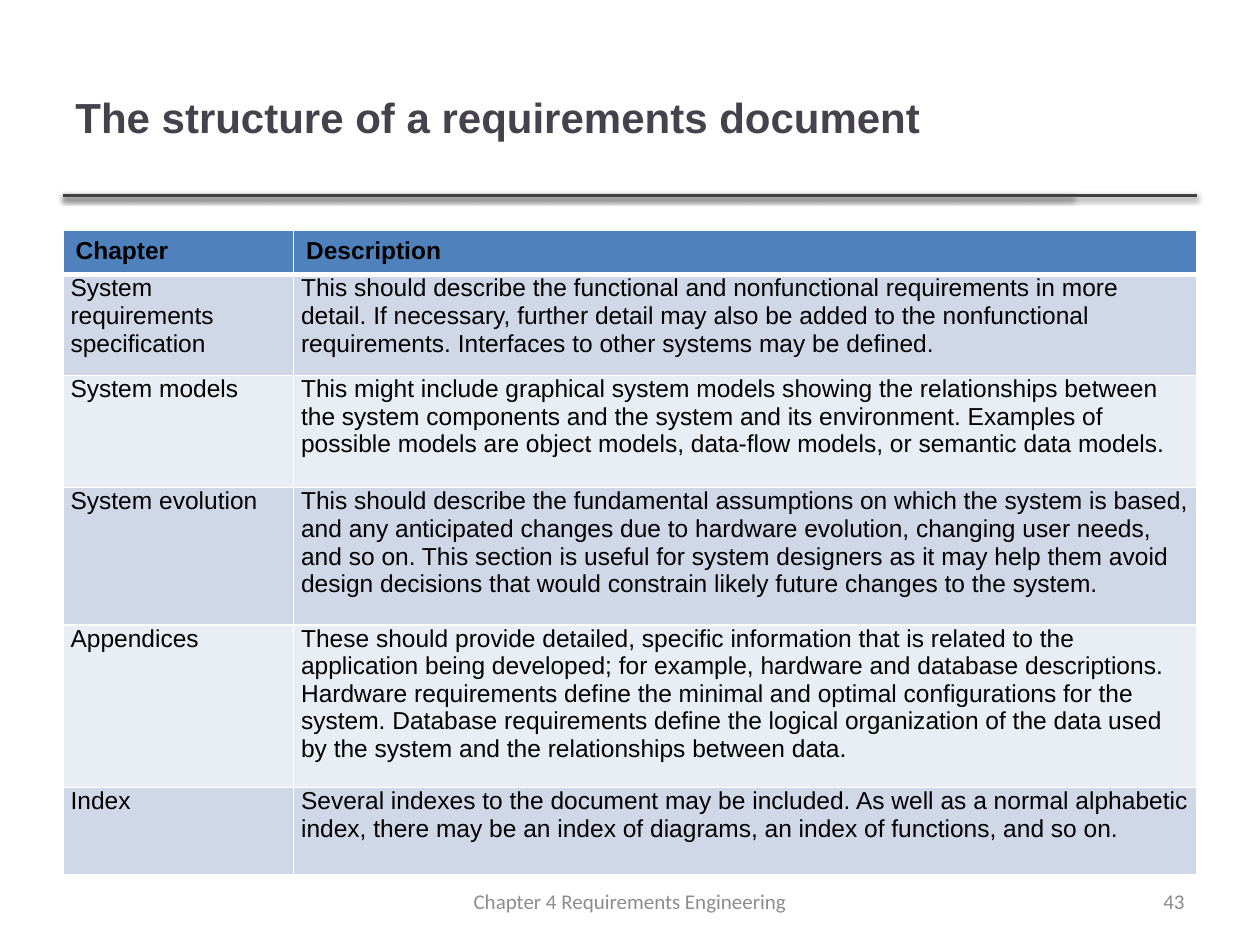
from lxml.etree import SubElement
from pptx import Presentation
from pptx.dml.color import RGBColor
from pptx.enum.shapes import MSO_CONNECTOR
from pptx.enum.text import MSO_ANCHOR, PP_ALIGN
from pptx.oxml.ns import qn
from pptx.util import Inches, Pt

COLORS = {"title": "46424D", "rule": "404040", "shade": "000000", "text": "000000",
          "head": "4F81BD", "odd": "D0D8E8", "even": "E9EDF4",
          "edge": "FFFFFF", "foot": "8C8C8C"}
WIDTH, HEIGHT = Inches(10), Inches(7.5)
COL, ROW = WIDTH / 100, HEIGHT / 150

HEADS = ("Chapter", "Description")
ROWS = (
    ("System requirements specification",
     "This should describe the functional and nonfunctional requirements in more detail. "
     "If necessary, further detail may also be added to the nonfunctional requirements. "
     "Interfaces to other systems may be defined."),
    ("System models",
     "This might include graphical system models showing the relationships between the "
     "system components and the system and its environment. Examples of possible models "
     "are object models, data-flow models, or semantic data models."),
    ("System evolution",
     "This should describe the fundamental assumptions on which the system is based, and "
     "any anticipated changes due to hardware evolution, changing user needs, and so on. "
     "This section is useful for system designers as it may help them avoid design "
     "decisions that would constrain likely future changes to the system."),
    ("Appendices",
     "These should provide detailed, specific information that is related to the "
     "application being developed; for example, hardware and database descriptions. "
     "Hardware requirements define the minimal and optimal configurations for the system. "
     "Database requirements define the logical organization of the data used by the "
     "system and the relationships between data."),
    ("Index",
     "Several indexes to the document may be included. As well as a normal alphabetic "
     "index, there may be an index of diagrams, an index of functions, and so on."),
)


def place(left, top, wide, high):
    """Turn grid columns and rows into slide lengths."""
    return round(left * COL), round(top * ROW), round(wide * COL), round(high * ROW)


def paint(name):
    """Look up a named colour."""
    return RGBColor.from_string(COLORS[name])


def write(frame, text, face, size, tint, bold=False, align=PP_ALIGN.LEFT):
    """Put one styled paragraph into a text frame."""
    para = frame.paragraphs[0]
    para.text, para.alignment = text, align
    font = para.font
    font.name, font.size, font.bold = face, Pt(size), bold
    font.color.rgb = paint(tint)


def add_text(slide, box, *args, **style):
    """Add a wrapped, vertically centred text box."""
    frame = slide.shapes.add_textbox(*place(*box)).text_frame
    frame.word_wrap, frame.vertical_anchor = True, MSO_ANCHOR.MIDDLE
    write(frame, *args, **style)


def add_rule(slide, left, top, wide):
    """Draw a horizontal line with a soft shadow below it."""
    x, y, w, _ = place(left, top, wide, 0)
    line = slide.shapes.add_connector(MSO_CONNECTOR.STRAIGHT, x, y, x + w, y)
    line.line.width, line.line.color.rgb = Pt(2), paint("rule")
    effects = SubElement(line._element.spPr, qn("a:effectLst"))
    shadow = SubElement(effects, qn("a:outerShdw"), blurRad=str(Pt(3.1)),
                        dist=str(Pt(1.6)), dir="5400000", rotWithShape="0")
    shade = SubElement(shadow, qn("a:srgbClr"), val=COLORS["shade"])
    SubElement(shade, qn("a:alpha"), val="38000")


def add_head(slide, left, top, wide, high):
    """Place the title and the doubled rule at its foot."""
    add_text(slide, (left, top, wide * 0.89, high),
             "The structure of a requirements document", "Arial", 24, "title", bold=True)
    for share in (0.89, 1):
        add_rule(slide, left, top + high, wide * share)


def style_cell(cell, fill, above=1, below=1):
    """Give a cell its white edges and its fill."""
    props = cell._tc.get_or_add_tcPr()
    for side, size in zip("LRTB", (1, 1, above, below)):
        edge = SubElement(props, qn("a:ln" + side), w=str(Pt(size)))
        tint = SubElement(edge, qn("a:solidFill"))
        SubElement(tint, qn("a:srgbClr"), val=COLORS["edge"])
    cell.fill.solid()
    cell.fill.fore_color.rgb = paint(fill)


def add_grid(slide, left, top, wide, highs):
    """Build the table of chapters and descriptions."""
    box = place(left, top, wide, sum(highs))
    table = slide.shapes.add_table(len(highs), len(HEADS), *box).table
    table.horz_banding = False
    for col, share in zip(table.columns, (0.2033, 0.7967)):
        col.width = round(box[2] * share)
    for row, high in zip(table.rows, highs):
        row.height = round(high * ROW)
    for c, text in enumerate(HEADS):
        cell = table.cell(0, c)
        style_cell(cell, "head", below=3)
        write(cell.text_frame, text, "Arial", 14, "text", bold=True)
    for r, texts in enumerate(ROWS, 1):
        for c, text in enumerate(texts):
            cell = table.cell(r, c)
            cell.margin_left = cell.margin_right = Inches(0.06)
            cell.margin_top, cell.margin_bottom = 0, Inches(0.1)
            style_cell(cell, "odd" if r % 2 else "even", above=3 if r == 1 else 1)
            write(cell.text_frame, text, "Arial", 14, "text",
                  align=PP_ALIGN.LEFT if c else PP_ALIGN.JUSTIFY)


def add_foot(slide, left, top, wide, high):
    """Place the chapter name and the page number."""
    add_text(slide, (left + wide * 0.324, top, wide * 0.352, high),
             "Chapter 4 Requirements Engineering", "Calibri", 12, "foot",
             align=PP_ALIGN.CENTER)
    add_text(slide, (left + wide * 0.74, top, wide * 0.26, high),
             "43", "Calibri", 12, "foot", align=PP_ALIGN.RIGHT)


def main():
    """Build and save the slide."""
    deck = Presentation()
    deck.slide_width, deck.slide_height = WIDTH, HEIGHT
    slide = deck.slides.add_slide(deck.slide_layouts[6])
    add_head(slide, 5, 6, 90, 25)
    add_grid(slide, 5, 36.6, 90, (7, 15.2, 17.8, 21.8, 25.8, 13.8))
    add_foot(slide, 5, 139, 90, 8)
    deck.save("out.pptx")


if __name__ == "__main__":
    main()
